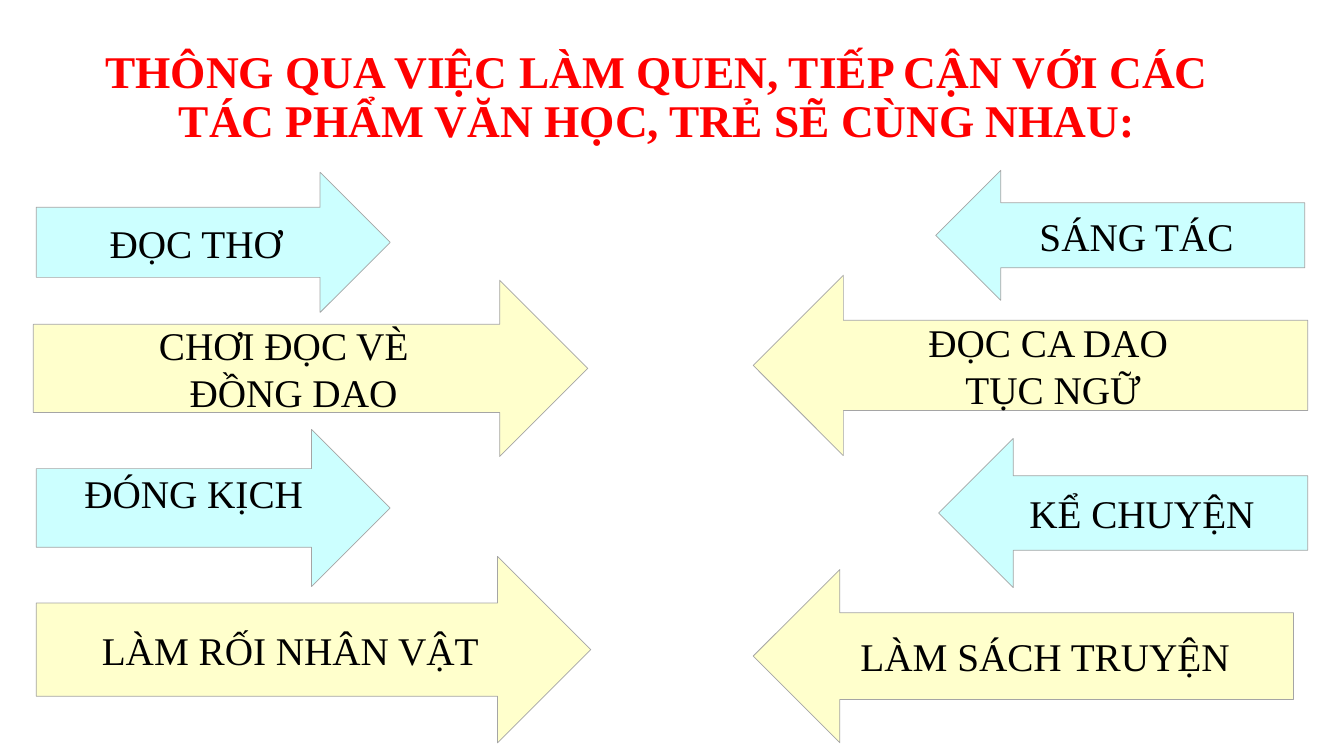
import pptx
import pptx.util
import pptx.dml.color
import pptx.enum.shapes
import pptx.enum.text

COLORS = {"title": "FF0000", "text": "000000", "blue": "CCFFFF",
          "yellow": "FFFFCC", "outline": "A5A5A5"}
RIGHT = pptx.enum.shapes.MSO_SHAPE.RIGHT_ARROW
LEFT = pptx.enum.shapes.MSO_SHAPE.LEFT_ARROW

deck = pptx.Presentation()
deck.slide_width = pptx.util.Inches(13.33)
deck.slide_height = pptx.util.Inches(7.5)
slide = deck.slides.add_slide(deck.slide_layouts[6])


def share(left, top, width, height):
    """Turn percentages of the slide into a position and a size."""
    across, down = deck.slide_width / 100, deck.slide_height / 100
    return [round(n) for n in (left * across, top * down, width * across, height * down)]


def write(shape, text, size=28, color="text", bold=False, spacing=1.0):
    frame = shape.text_frame
    frame.word_wrap = True
    frame.vertical_anchor = pptx.enum.text.MSO_ANCHOR.MIDDLE
    paragraph = frame.paragraphs[0]
    paragraph.text = text
    paragraph.alignment = pptx.enum.text.PP_ALIGN.CENTER
    paragraph.line_spacing = spacing
    for run in paragraph.runs:
        run.font.name = "Times New Roman"
        run.font.size = pptx.util.Pt(size)
        run.font.bold = bold
        run.font.color.rgb = pptx.dml.color.RGBColor.from_string(COLORS[color])


heading = slide.shapes.add_textbox(*share(4.13, 4.67, 89.5, 16.53))
write(heading, "THÔNG QUA VIỆC LÀM QUEN, TIẾP CẬN VỚI CÁC TÁC PHẨM VĂN HỌC, TRẺ SẼ CÙNG NHAU:",
      size=32.4, color="title", bold=True, spacing=0.9)

# Direction, text, place in percent of the slide, extra space under the text in points
activities = [
    (RIGHT, "ĐỌC THƠ", (2.7, 22.8, 26.33, 18.53), 0),
    (RIGHT, "CHƠI ĐỌC VÈ \v ĐỒNG DAO", (2.48, 37.07, 41.26, 23.33), 0),
    (RIGHT, "ĐÓNG KỊCH", (2.7, 56.8, 26.33, 20.8), 22),
    (RIGHT, "LÀM RỐI NHÂN VẬT", (2.7, 73.6, 41.26, 24.67), 0),
    (LEFT, "SÁNG TÁC", (69.62, 22.53, 27.46, 17.2), 0),
    (LEFT, "ĐỌC CA DAO \vTỤC NGỮ", (56.04, 36.4, 41.26, 23.87), 0),
    (LEFT, "KỂ CHUYỆN", (69.84, 58, 27.46, 19.73), 0),
    (LEFT, "LÀM SÁCH TRUYỆN", (56.04, 75.33, 40.21, 22.93), 0),
]
for index, (direction, activity, place, lift) in enumerate(activities):
    arrow = slide.shapes.add_shape(direction, *share(*place))
    arrow.shadow.inherit = False
    arrow.fill.solid()
    fill = COLORS["yellow" if index % 2 else "blue"]
    arrow.fill.fore_color.rgb = pptx.dml.color.RGBColor.from_string(fill)
    arrow.line.color.rgb = pptx.dml.color.RGBColor.from_string(COLORS["outline"])
    arrow.line.width = pptx.util.Pt(0.5)
    arrow.text_frame.margin_bottom += pptx.util.Pt(lift)
    write(arrow, activity)

deck.save("out.pptx")
